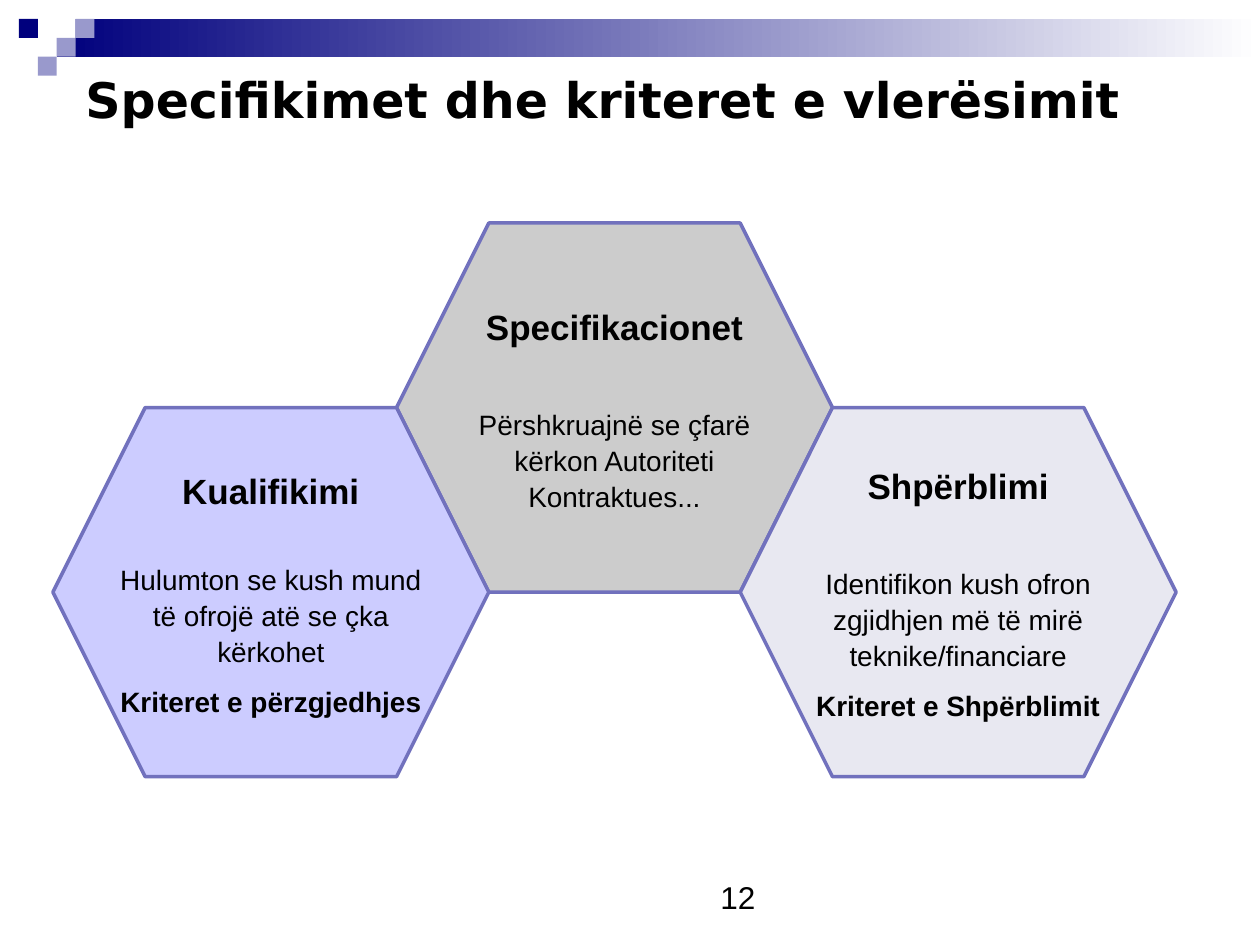
from dataclasses import dataclass

from pptx import Presentation
from pptx.dml.color import RGBColor
from pptx.enum.shapes import MSO_SHAPE
from pptx.enum.text import MSO_ANCHOR, PP_ALIGN
from pptx.util import Inches, Pt

RECTANGLE, HEXAGON = MSO_SHAPE.RECTANGLE, MSO_SHAPE.HEXAGON
MIDDLE, CENTER = MSO_ANCHOR.MIDDLE, PP_ALIGN.CENTER

BLACK = RGBColor(0x00, 0x00, 0x00)
WHITE = RGBColor(0xFF, 0xFF, 0xFF)
NAVY = RGBColor(0x00, 0x00, 0x7D)
PERIWINKLE = RGBColor(0x99, 0x99, 0xCC)
OUTLINE = RGBColor(0x71, 0x71, 0xBD)
GRAY = RGBColor(0xCC, 0xCC, 0xCC)
PALE_GRAY = RGBColor(0xE8, 0xE8, 0xF1)
LAVENDER = RGBColor(0xCC, 0xCC, 0xFF)

SLIDE_WIDTH, SLIDE_HEIGHT = Inches(10), Inches(7.5)
CELL = Inches(0.15)  # grid of the header decoration

HEX_WIDTH, HEX_HEIGHT = Inches(3.46), Inches(2.93)
HEX_LEFT, HEX_TOP = Inches(0.42), Inches(1.77)
# Neighbours share a slanted edge: the slant is a quarter of the height.
HEX_COLUMN = HEX_WIDTH - HEX_HEIGHT // 4
HEX_ROW = HEX_HEIGHT // 2


@dataclass(frozen=True)
class Square:
    column: int
    row: int
    color: RGBColor


@dataclass(frozen=True)
class Stage:
    column: int
    row: int
    color: RGBColor
    heading: str
    heading_gap: int
    description: str
    criteria: str = ""
    inset: float = 0


SQUARES = [
    Square(3, 1, WHITE),
    Square(4, 1, PERIWINKLE),
    Square(1, 1, NAVY),
    Square(3, 2, PERIWINKLE),
    Square(2, 3, PERIWINKLE),
]

STAGES = [
    Stage(1, 0, GRAY, "Specifikacionet", 33,
          "Përshkruajnë se çfarë kërkon Autoriteti Kontraktues...", inset=0.1),
    Stage(2, 1, PALE_GRAY, "Shpërblimi", 33,
          "Identifikon kush ofron zgjidhjen më të mirë teknike/financiare",
          "Kriteret e Shpërblimit"),
    Stage(0, 1, LAVENDER, "Kualifikimi", 28,
          "Hulumton se kush mund të ofrojë atë se çka kërkohet",
          "Kriteret e përzgjedhjes"),
]


def style(paragraph, size: int, bold: bool = False, font_name: str = "Arial") -> None:
    font = paragraph.font
    font.name, font.size, font.bold = font_name, Pt(size), bold
    font.color.rgb = BLACK


def add_header_block(slide, column: int, row: int, width: int, height: int):
    block = slide.shapes.add_shape(RECTANGLE, column * CELL, row * CELL, width, height)
    block.shadow.inherit = False
    block.line.fill.background()
    return block


def draw_header(slide) -> None:
    band = add_header_block(slide, 3, 1, SLIDE_WIDTH - 3 * CELL, 2 * CELL)
    band.fill.gradient()
    band.fill.gradient_angle = 0
    for stop, color in zip(band.fill.gradient_stops, (NAVY, WHITE)):
        stop.color.rgb = color
    for square in SQUARES:
        block = add_header_block(slide, square.column, square.row, CELL, CELL)
        block.fill.solid()
        block.fill.fore_color.rgb = square.color


def draw_label(slide, text: str, left: float, top: float, width: float,
               height: float, size: int, bold: bool, font_name: str) -> None:
    """Place one line of text; the position and size are in inches."""
    label = slide.shapes.add_textbox(*map(Inches, (left, top, width, height)))
    label.text_frame.word_wrap = True
    label.text_frame.text = text
    style(label.text_frame.paragraphs[0], size, bold, font_name)


def draw_stage(slide, stage: Stage) -> None:
    hexagon = slide.shapes.add_shape(
        HEXAGON, HEX_LEFT + stage.column * HEX_COLUMN,
        HEX_TOP + stage.row * HEX_ROW, HEX_WIDTH, HEX_HEIGHT)
    hexagon.shadow.inherit = False
    hexagon.fill.solid()
    hexagon.fill.fore_color.rgb = stage.color
    hexagon.line.color.rgb = OUTLINE
    hexagon.line.width = Pt(2)

    frame = hexagon.text_frame
    frame.word_wrap = True
    frame.vertical_anchor = MIDDLE
    frame.margin_left = frame.margin_right = Inches(stage.inset)
    frame.margin_top = frame.margin_bottom = Inches(stage.inset / 2)
    lines = [(stage.heading, 20, True, stage.heading_gap),
             (stage.description, 16, False, 8)]
    if stage.criteria:
        lines.append((stage.criteria, 16, True, 8))
    frame.text = "\n".join(text for text, *_ in lines)
    for paragraph, (_, size, bold, gap) in zip(frame.paragraphs, lines):
        paragraph.alignment = CENTER
        paragraph.line_spacing = 1.07
        paragraph.space_after = Pt(gap)
        style(paragraph, size, bold)


def main() -> None:
    presentation = Presentation()
    presentation.slide_width, presentation.slide_height = SLIDE_WIDTH, SLIDE_HEIGHT
    slide = presentation.slides.add_slide(presentation.slide_layouts[6])
    draw_header(slide)
    draw_label(slide, "12", 5.62, 6.92, 0.64, 0.4, 18, False, "Arial")
    draw_label(slide, "Specifikimet dhe kriteret e vlerësimit",
               0.58, 0.5, 8.42, 0.57, 28, True, "DejaVu Sans")
    for stage in STAGES:
        draw_stage(slide, stage)
    presentation.save("out.pptx")


if __name__ == "__main__":
    main()
